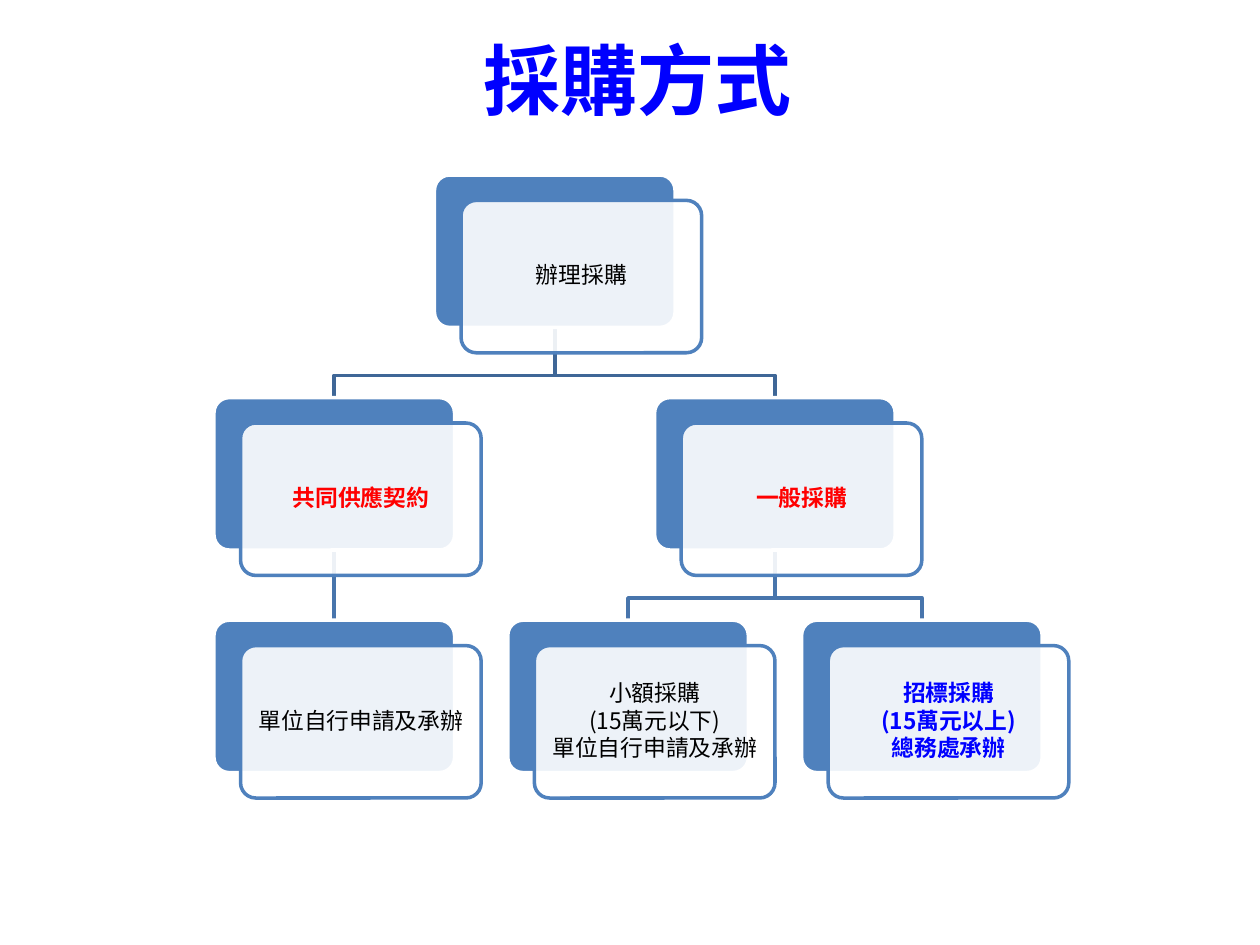
from dataclasses import dataclass

from lxml import etree
from pptx import Presentation
from pptx.dml.color import RGBColor
from pptx.enum.shapes import MSO_CONNECTOR, MSO_SHAPE
from pptx.enum.text import MSO_ANCHOR, PP_ALIGN
from pptx.oxml.ns import qn
from pptx.util import Pt

ROUNDED = MSO_SHAPE.ROUNDED_RECTANGLE
STRAIGHT = MSO_CONNECTOR.STRAIGHT
MIDDLE = MSO_ANCHOR.MIDDLE
CENTER = PP_ALIGN.CENTER


@dataclass(frozen=True)
class Theme:
    font: str = "Noto Sans CJK SC"
    title_size: float = 44
    body_size: float = 13
    line_width: float = 2
    black: str = "000000"
    white: str = "FFFFFF"
    red: str = "FF0000"
    blue: str = "0000FF"
    card: str = "4F81BD"
    upper_link: str = "3F6797"
    lower_link: str = "4875AC"


CARD_W, CARD_H = 137.5, 87.1
SHIFT_X, SHIFT_Y = 15.2, 14.5
TEXT_PAD = 2.55
TOP, ROW_PITCH = 100, 127.2
BEND = 27.4


def row_top(row):
    return TOP + row * ROW_PITCH


class Deck:
    def __init__(self, prs, theme):
        self.theme = theme
        self.s = prs.slides.add_slide(prs.slide_layouts[5])

    def style(self, tf, size, color, bold):
        for p in tf.paragraphs:
            p.alignment = CENTER
            for r in p.runs:
                r.font.name = self.theme.font
                r.font.size = Pt(size)
                r.font.bold = bold
                r.font.color.rgb = RGBColor.from_string(color)
                ea = etree.SubElement(r.font._element, qn("a:ea"))
                ea.set("typeface", self.theme.font)

    def title(self, text):
        sp = self.s.shapes.title
        sp.left, sp.top, sp.width, sp.height = Pt(40.5), Pt(0), Pt(648), Pt(90)
        tf = sp.text_frame
        tf.text = text
        tf.vertical_anchor = MIDDLE
        self.style(tf, self.theme.title_size, self.theme.blue, True)

    def outline(self, sp, color):
        sp.line.color.rgb = RGBColor.from_string(color)
        sp.line.width = Pt(self.theme.line_width)

    def link(self, parent, child, row, color):
        top = row_top(row) + CARD_H
        bottom = row_top(row + 1)
        if parent == child:
            sp = self.s.shapes.add_connector(
                STRAIGHT, Pt(parent), Pt(top), Pt(child), Pt(bottom))
            etree.SubElement(sp._element.spPr, qn("a:effectLst"))
        else:
            bend = Pt(top + BEND)
            fb = self.s.shapes.build_freeform(Pt(parent), Pt(top))
            fb.add_line_segments(
                [(Pt(parent), bend), (Pt(child), bend), (Pt(child), Pt(bottom))],
                close=False)
            sp = fb.convert_to_shape()
            sp.fill.background()
            sp.shadow.inherit = False
        self.outline(sp, color)

    def panel(self, x, y, fill, line, opacity=100):
        sp = self.s.shapes.add_shape(ROUNDED, Pt(x), Pt(y), Pt(CARD_W), Pt(CARD_H))
        sp.adjustments[0] = 0.1
        sp.shadow.inherit = False
        sp.fill.solid()
        sp.fill.fore_color.rgb = RGBColor.from_string(fill)
        if opacity < 100:
            clr = sp._element.spPr.find(qn("a:solidFill")).find(qn("a:srgbClr"))
            etree.SubElement(clr, qn("a:alpha")).set("val", str(opacity * 1000))
        self.outline(sp, line)

    def label(self, x, y, text, color, bold):
        sp = self.s.shapes.add_textbox(
            Pt(x + TEXT_PAD), Pt(y + TEXT_PAD),
            Pt(CARD_W - 2 * TEXT_PAD), Pt(CARD_H - 2 * TEXT_PAD))
        tf = sp.text_frame
        tf.word_wrap = True
        tf.vertical_anchor = MIDDLE
        tf.margin_left = tf.margin_right = Pt(3.6)
        tf.margin_top = tf.margin_bottom = Pt(3.6)
        tf.text = text
        for p in tf.paragraphs:
            p.line_spacing = 0.9
            p.space_after = Pt(1.5)
        self.style(tf, self.theme.body_size, color, bold)

    def card(self, center, row, text, color, bold):
        x, y = center - CARD_W / 2, row_top(row)
        front_x, front_y = x + SHIFT_X, y + SHIFT_Y
        self.panel(x, y, self.theme.card, self.theme.white)
        self.panel(front_x, front_y, self.theme.white, self.theme.card, 90)
        self.label(front_x, front_y, text, color, bold)


def main():
    prs = Presentation()
    prs.slide_width, prs.slide_height = Pt(720), Pt(540)
    theme = Theme()
    deck = Deck(prs, theme)
    deck.title("採購方式")

    root, contract, general, small, tender = 317, 191, 442.8, 358.9, 526.8
    links = [
        (general, tender, 1, theme.lower_link),
        (general, small, 1, theme.lower_link),
        (root, general, 0, theme.upper_link),
        (contract, contract, 1, theme.lower_link),
        (root, contract, 0, theme.upper_link),
    ]
    cards = [
        (root, 0, "辦理採購", theme.black, False),
        (contract, 1, "共同供應契約", theme.red, True),
        (contract, 2, "單位自行申請及承辦", theme.black, False),
        (general, 1, "一般採購", theme.red, True),
        (small, 2, "小額採購\n(15萬元以下)\n單位自行申請及承辦", theme.black, False),
        (tender, 2, "招標採購\n(15萬元以上)\n總務處承辦", theme.blue, True),
    ]
    for link in links:
        deck.link(*link)
    for card in cards:
        deck.card(*card)
    prs.save("out.pptx")


if __name__ == "__main__":
    main()
